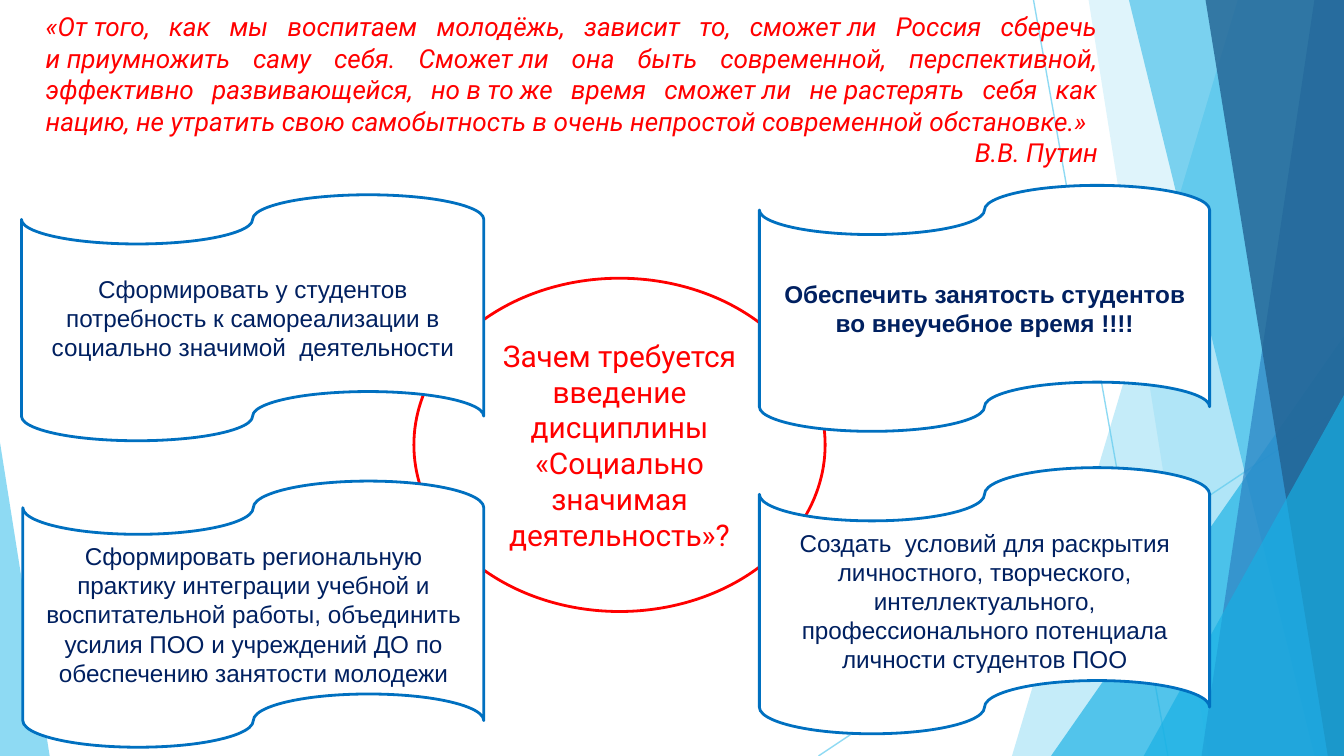
from pptx import Presentation
from pptx.dml.color import RGBColor
from pptx.enum.shapes import MSO_CONNECTOR, MSO_SHAPE
from pptx.enum.text import MSO_ANCHOR, MSO_AUTO_SIZE, PP_ALIGN
from pptx.oxml.ns import qn
from pptx.util import Inches, Pt
from lxml import etree

WIDTH = 10
HEIGHT = WIDTH * 9 / 16
SKY = RGBColor(0x5F, 0xCB, 0xEF)
CYAN = RGBColor(0x17, 0xB0, 0xE4)
BLUE = RGBColor(0x2E, 0x83, 0xC3)
DEEP_BLUE = RGBColor(0x22, 0x62, 0x92)
RED = RGBColor(0xFF, 0x00, 0x00)
OUTLINE = RGBColor(0x00, 0x70, 0xC0)
NAVY = RGBColor(0x00, 0x20, 0x60)
WHITE = RGBColor(0xFF, 0xFF, 0xFF)

STRAIGHT = MSO_CONNECTOR.STRAIGHT
TRIANGLE = MSO_SHAPE.ISOSCELES_TRIANGLE
OVAL = MSO_SHAPE.OVAL
TAPE = MSO_SHAPE.FLOWCHART_PUNCHED_TAPE
TOP, MIDDLE = MSO_ANCHOR.TOP, MSO_ANCHOR.MIDDLE
NO_AUTOFIT = MSO_AUTO_SIZE.NONE
CENTER, JUSTIFY, RIGHT = PP_ALIGN.CENTER, PP_ALIGN.JUSTIFY, PP_ALIGN.RIGHT

NO_BREAK_SPACE = chr(160)
# A tilde stands for a no-break space
QUOTE = (
    "«От~того, как мы воспитаем молодёжь, зависит то, сможет~ли Россия сберечь "
    "и~приумножить саму себя. Сможет~ли она быть современной, перспективной, "
    "эффективно развивающейся, но~в~то~же время сможет~ли не~растерять себя как "
    "нацию, не~утратить свою самобытность в~очень непростой современной обстановке.»"
).replace("~", NO_BREAK_SPACE)
AUTHOR = "В.В. Путин"
QUESTION = "Зачем требуется введение дисциплины «Социально значимая деятельность»?"
# Box of each tape, its text, and whether the text is bold
REASONS = [
    ((5.65, 1.38, 3.35, 1.83),
     "Обеспечить занятость студентов во внеучебное время !!!!", True),
    ((0.16, 1.45, 3.44, 1.83),
     "Сформировать у студентов потребность к самореализации в социально "
     "значимой  деятельности", False),
    ((0.17, 3.58, 3.43, 1.98),
     "Сформировать региональную практику интеграции учебной и воспитательной "
     "работы, объединить усилия ПОО и учреждений ДО по обеспечению занятости "
     "молодежи", False),
    ((5.65, 3.48, 3.35, 1.98),
     "Создать  условий для раскрытия личностного, творческого, интеллектуального, "
     "профессионального потенциала личности студентов ПОО", False),
]


def inches(values):
    return [Inches(value) for value in values]


def set_opacity(fill_owner, percent):
    """Make the solid colour inside the given XML element translucent."""
    color = next(fill_owner.iter(qn("a:srgbClr")))
    etree.SubElement(color, qn("a:alpha"), val=str(percent * 1000))


def tint(shape, color, opacity):
    shape.shadow.inherit = False
    shape.fill.solid()
    shape.fill.fore_color.rgb = color
    shape.line.fill.background()
    set_opacity(shape.element.spPr, opacity)


def style_paragraph(para, align, font_name, size, color, bold=False, italic=False):
    para.alignment = align
    for span in para.runs:
        font = span.font
        font.name, font.size = font_name, Pt(size)
        font.bold, font.italic = bold, italic
        font.color.rgb = color


def add_ray(page, start, end):
    ray = page.shapes.add_connector(STRAIGHT, *inches(start + end))
    ray.line.color.rgb = SKY
    ray.line.width = Pt(0.75)
    properties = ray.element.spPr
    set_opacity(properties, 70)
    etree.SubElement(properties, qn("a:effectLst"))


def add_facet(page, top_left, bottom_left, color, opacity):
    """Full-height panel with a slanted left edge, reaching the right slide edge."""
    points = [(top_left, 0), (WIDTH, 0), (WIDTH, HEIGHT), (bottom_left, HEIGHT)]
    corners = [tuple(inches(point)) for point in points]
    builder = page.shapes.build_freeform(*corners[0])
    builder.add_line_segments(corners[1:], close=True)
    tint(builder.convert_to_shape(), color, opacity)


def add_corner(page, left, top, width, apex, color, opacity):
    """Right triangle standing on the bottom edge; apex is 0 (left) or 1 (right)."""
    box = (left, top, width, HEIGHT - top)
    corner = page.shapes.add_shape(TRIANGLE, *inches(box))
    corner.adjustments[0] = apex
    tint(corner, color, opacity)


def add_backdrop(page):
    add_ray(page, (7.69, 0), (8.69, HEIGHT))
    add_ray(page, (WIDTH, 3.02), (6.09, HEIGHT))
    add_facet(page, 9.21, 7.53, SKY, 36)
    add_facet(page, 8.1, 8.99, SKY, 20)
    add_corner(page, 7.82, 2.5, 2.18, 1, CYAN, 66)
    add_facet(page, 8.4, 9.78, CYAN, 50)
    add_facet(page, 9.78, 8.94, BLUE, 70)
    add_facet(page, 8.97, 9.88, DEEP_BLUE, 80)
    add_corner(page, 8.51, 2.94, 1.49, 1, CYAN, 66)
    add_corner(page, 0, 3.29, 0.37, 0, SKY, 70)


def add_outlined_text(page, kind, box, text, line_color):
    """Outlined shape with centred text; returns the shape for further styling."""
    shape = page.shapes.add_shape(kind, *inches(box))
    shape.shadow.inherit = False
    shape.fill.background()
    shape.line.color.rgb = line_color
    shape.line.width = Pt(1.5)
    shape.text_frame.word_wrap = True
    shape.text_frame.vertical_anchor = MIDDLE
    shape.text_frame.text = text
    return shape


def add_question(page, box):
    oval = add_outlined_text(page, OVAL, box, QUESTION, RED)
    style_paragraph(oval.text_frame.paragraphs[0], CENTER, "Roboto", 16, RED)


def add_reason(page, box, text, bold):
    tape = add_outlined_text(page, TAPE, box, text, OUTLINE)
    tape.fill.solid()
    tape.fill.fore_color.rgb = WHITE
    style_paragraph(tape.text_frame.paragraphs[0], CENTER, "Arial", 13, NAVY, bold)


def place_quote(page, box):
    title = page.shapes.title
    title.left, title.top, title.width, title.height = inches(box)
    frame = title.text_frame
    frame.word_wrap = True
    frame.auto_size = NO_AUTOFIT
    frame.vertical_anchor = TOP
    frame.text = QUOTE
    frame.add_paragraph().text = AUTHOR
    for para, align in zip(frame.paragraphs, (JUSTIFY, RIGHT)):
        style_paragraph(para, align, "Roboto", 14, RED, italic=True)
    page.shapes.element.append(title.element)  # bring to front


def main():
    deck = Presentation()
    deck.slide_width, deck.slide_height = inches((WIDTH, HEIGHT))
    page = deck.slides.add_slide(deck.slide_layouts.get_by_name("Title Only"))
    add_backdrop(page)
    add_question(page, (3.08, 2.07, 3.06, 2.48))
    for box, text, bold in REASONS:
        add_reason(page, box, text, bold)
    place_quote(page, (0.24, 0.03, 8.03, 1.28))
    deck.save("out.pptx")


if __name__ == "__main__":
    main()
